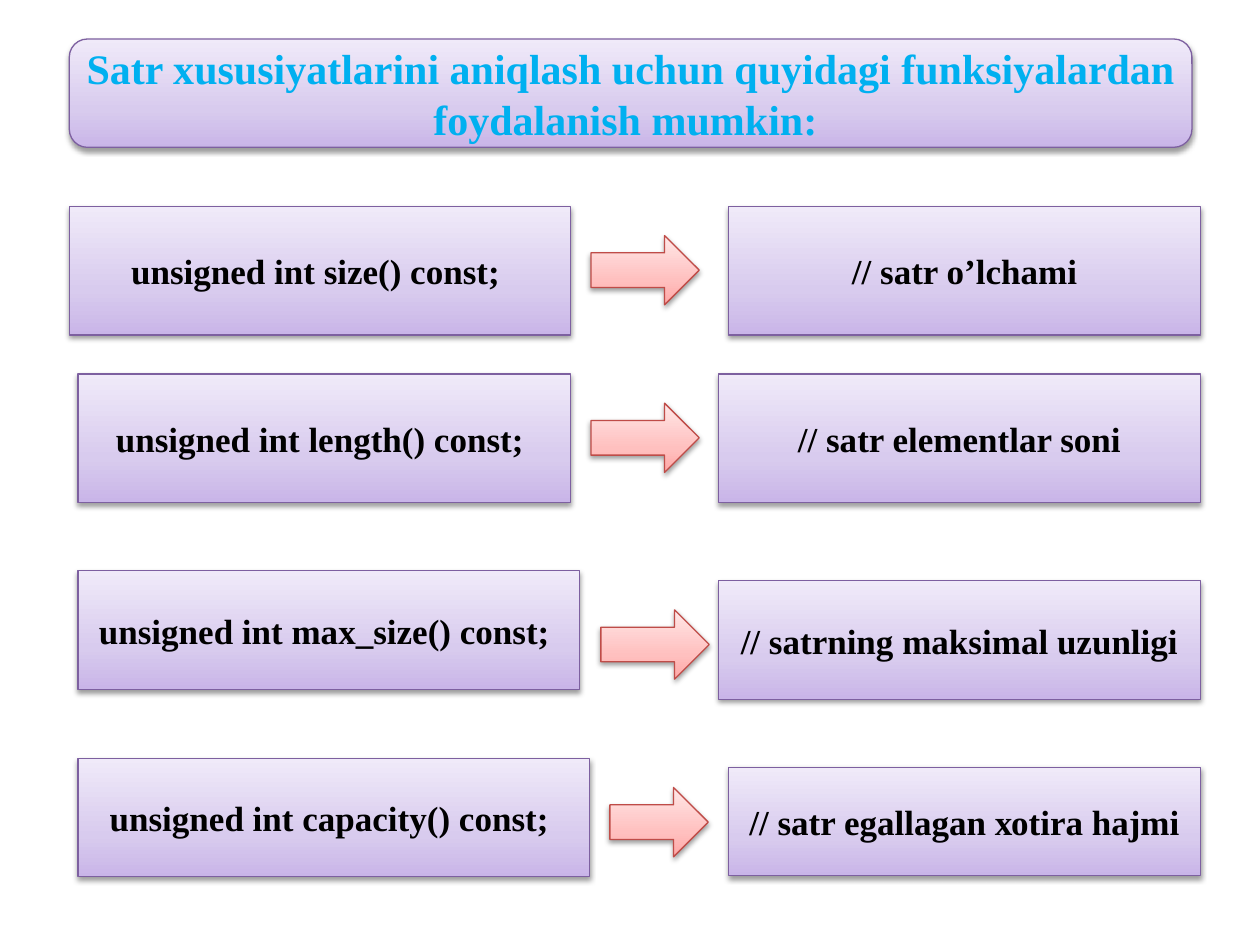
from copy import deepcopy
from dataclasses import dataclass

from lxml.etree import SubElement
from pptx import Presentation
from pptx.dml.color import RGBColor
from pptx.enum.shapes import MSO_SHAPE
from pptx.enum.text import MSO_ANCHOR, MSO_AUTO_SIZE, PP_ALIGN
from pptx.oxml.ns import qn
from pptx.util import Pt


@dataclass(frozen=True)
class Theme:
    font: str = "Times New Roman"
    title_size: float = 24
    body_size: float = 20
    title_color: str = "00B0F0"
    body_color: str = "000000"
    shadow: str = "000000"
    line_width: float = 0.75
    stops: tuple = (0, 0.35, 1)
    purple: tuple = ("C9B5E8", "D8CBEE", "F0EAF9")
    purple_line: str = "7D60A0"
    red: tuple = ("FFA6A5", "FFC0BF", "FFE7E7")
    red_line: str = "BF4C48"


class SlideBuilder:
    """Draws themed elements on one slide, with lengths in points."""

    def __init__(self, s, theme):
        self.s = s
        self.theme = theme

    def shape(self, kind, box, colors, line):
        t = self.theme
        sp = self.s.shapes.add_shape(kind, *map(Pt, box))
        sp.fill.gradient()
        sp.fill.gradient_angle = 90
        gs_lst = sp.element.spPr.find(".//" + qn("a:gsLst"))
        gs_lst.append(deepcopy(gs_lst[-1]))
        for stop, position, color in zip(sp.fill.gradient_stops, t.stops, colors):
            stop.position = position
            stop.color.rgb = RGBColor.from_string(color)
        sp.line.color.rgb = RGBColor.from_string(line)
        sp.line.width = Pt(t.line_width)
        self.shadow(sp)
        return sp

    def shadow(self, sp):
        sp.shadow.inherit = False
        effects = sp.element.spPr.find(qn("a:effectLst"))
        outer = SubElement(effects, qn("a:outerShdw"), blurRad=str(Pt(3.1)),
                           dist=str(Pt(1.6)), dir="5400000", rotWithShape="0")
        color = SubElement(outer, qn("a:srgbClr"), val=self.theme.shadow)
        SubElement(color, qn("a:alpha"), val="38000")

    def text(self, sp, text, size, color):
        tf = sp.text_frame
        tf.text = text
        tf.word_wrap = True
        tf.auto_size = MSO_AUTO_SIZE.NONE
        tf.vertical_anchor = MSO_ANCHOR.MIDDLE
        p = tf.paragraphs[0]
        p.alignment = PP_ALIGN.CENTER
        for r in p.runs:
            r.font.name = self.theme.font
            r.font.size = Pt(size)
            r.font.bold = True
            r.font.color.rgb = RGBColor.from_string(color)

    def title(self, box, text):
        t = self.theme
        panel = self.shape(MSO_SHAPE.ROUNDED_RECTANGLE, box, t.purple, t.purple_line)
        title = self.s.shapes.title
        title.element.addprevious(panel.element)
        title.left, title.top, title.width, title.height = map(Pt, box)
        self.text(title, text, t.title_size, t.title_color)

    def card(self, box, text):
        t = self.theme
        sp = self.shape(MSO_SHAPE.RECTANGLE, box, t.purple, t.purple_line)
        self.text(sp, text, t.body_size, t.body_color)

    def arrow(self, box):
        t = self.theme
        self.shape(MSO_SHAPE.RIGHT_ARROW, box, t.red, t.red_line)


ROWS = [
    ("unsigned int size() const; ", (39.6, 118.1, 286.6, 73.4),
     (337.7, 134.6, 61.9, 39.6),
     "// satr o’lchami", (416.2, 118.1, 270, 73.4)),
    ("unsigned int length() const; ", (44.6, 213.8, 281.5, 73.4),
     (337.7, 230.4, 61.9, 39.6),
     "// satr elеmеntlar sоni", (410.4, 213.8, 275.8, 73.4)),
    ("unsigned int max_size() const; ", (44.6, 326.2, 286.6, 67.7),
     (343.4, 348.5, 61.9, 39.6),
     "// satrning maksimal uzunligi", (410.4, 331.9, 275.8, 67.7)),
    ("unsigned int capacity() const; ", (44.6, 433.4, 292.3, 67.7),
     (348.5, 450, 56.2, 39.6),
     "// satr egallagan хоtira hajmi", (416.2, 438.5, 270, 61.9)),
]


def main():
    prs = Presentation()
    prs.slide_width, prs.slide_height = Pt(720), Pt(540)
    s = prs.slides.add_slide(prs.slide_layouts.get_by_name("Title Only"))
    builder = SlideBuilder(s, Theme())
    builder.title((39.6, 22.3, 641.5, 61.9),
                  "Satr хususiyatlarini aniqlash uchun quyidagi "
                  "funksiyalardan foydalanish mumkin: ")
    for function, function_box, arrow_box, meaning, meaning_box in ROWS:
        builder.card(function_box, function)
        builder.card(meaning_box, meaning)
        builder.arrow(arrow_box)
    prs.save("out.pptx")


if __name__ == "__main__":
    main()
